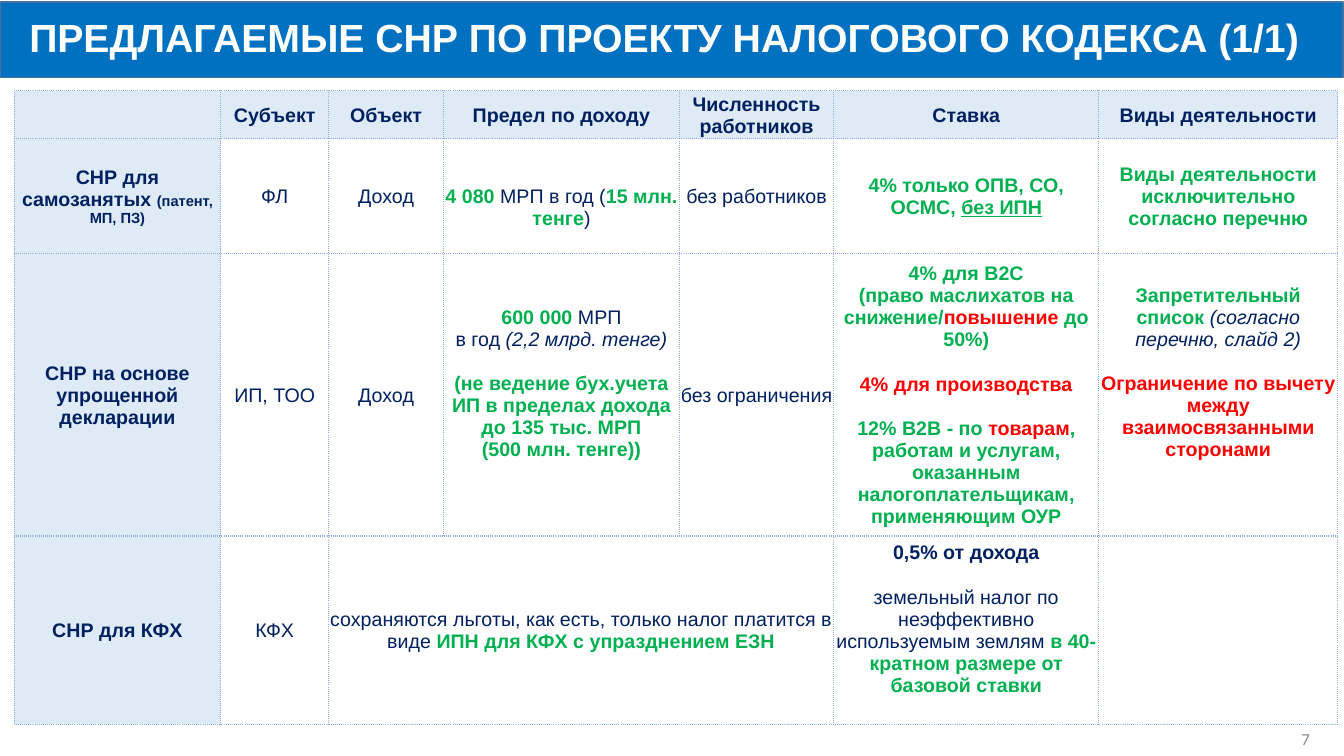
from lxml import etree
from pptx import Presentation, util as u
from pptx.dml.color import RGBColor
from pptx.enum import shapes, text
from pptx.oxml import ns

NAVY = RGBColor(0x00, 0x20, 0x60)
GREEN = RGBColor(0x00, 0xB0, 0x50)
RED = RGBColor(0xFF, 0x00, 0x00)
WHITE = RGBColor(0xFF, 0xFF, 0xFF)
GREY = RGBColor(0x8C, 0x8C, 0x8C)
BAR_BLUE = RGBColor(0x00, 0x70, 0xC0)
BAR_EDGE = RGBColor(0x43, 0x73, 0x9E)
PALE_BLUE = RGBColor(0xDE, 0xEB, 0xF7)
GRID_BLUE = RGBColor(0x8F, 0xAA, 0xDC)

# Run styles: colour, bold, italic, underline, size
PLAIN = (NAVY, False, False, False, 14)
ITALIC = (NAVY, False, True, False, 14)
HEAD = (NAVY, True, False, False, 14)
SMALL_HEAD = (NAVY, True, False, False, 10.5)
GOOD = (GREEN, True, False, False, 14)
GOOD_LINE = (GREEN, True, False, True, 14)
BAD = (RED, True, False, False, 14)
TITLE = (WHITE, True, False, False, 28)
PAGE = (GREY, False, False, False, 12)

LINE_GAP = 16  # one 14 pt text line, in points
LINE = 0.22    # the same line, in inches


def write(paragraph, parts, font="Arial"):
    """Add (wording, style) runs; a newline in the wording becomes a line break."""
    for wording, (colour, bold, italic, underline, size) in parts:
        for number, line in enumerate(wording.split("\n")):
            if number:
                paragraph.add_line_break()
            run = paragraph.add_run()
            run.text = line
            run.font.name, run.font.size = font, u.Pt(size)
            run.font.bold, run.font.italic = bold, italic
            run.font.underline = underline
            run.font.color.rgb = colour


def draw_borders(cell):
    properties = cell._tc.get_or_add_tcPr()
    for place, side in enumerate(("lnL", "lnR", "lnT", "lnB")):
        border = etree.Element(ns.qn("a:" + side), w=str(u.Pt(1)))
        fill = etree.SubElement(border, ns.qn("a:solidFill"))
        etree.SubElement(fill, ns.qn("a:srgbClr"), val=str(GRID_BLUE))
        etree.SubElement(border, ns.qn("a:prstDash"), val="sysDot")
        properties.insert(place, border)


deck = Presentation()
deck.slide_width, deck.slide_height = u.Inches(13.33), u.Inches(7.5)
slide = deck.slides.add_slide(deck.slide_layouts[6])

# Title bar
bar = slide.shapes.add_shape(shapes.MSO_SHAPE.RECTANGLE, 0, u.Inches(0.02),
                             u.Inches(13.32), u.Inches(0.75))
bar.shadow.inherit = False
bar.fill.solid()
bar.fill.fore_color.rgb = BAR_BLUE
bar.line.color.rgb = BAR_EDGE
bar.line.width = u.Pt(1)

title = slide.shapes.add_textbox(0, u.Inches(0.08), u.Inches(13.32), u.Inches(0.62)).text_frame
title.word_wrap = True
title.vertical_anchor = text.MSO_ANCHOR.MIDDLE
title.margin_left = u.Inches(0.29)
title.paragraphs[0].line_spacing = 0.9
write(title.paragraphs[0], [("ПРЕДЛАГАЕМЫЕ СНР ПО ПРОЕКТУ НАЛОГОВОГО КОДЕКСА (1/1)", TITLE)])

# Each cell is a list of paragraphs, each paragraph a list of runs
headings = ["Субъект", "Объект", "Предел по доходу", "Численность работников",
            "Ставка", "Виды деятельности"]
regimes = [
    [[]] + [[[(heading, HEAD)]] for heading in headings],
    [
        [[("СНР для самозанятых ", HEAD), ("(патент, МП, ПЗ)", SMALL_HEAD)]],
        [[("ФЛ", PLAIN)]],
        [[("Доход", PLAIN)]],
        [[("4 080 ", GOOD), ("МРП в год (", PLAIN), ("15 млн. тенге", GOOD), (")", PLAIN)]],
        [[("без работников", PLAIN)]],
        [[("4% только ОПВ, СО, ОСМС, ", GOOD), ("без ИПН", GOOD_LINE)]],
        [[("Виды деятельности исключительно согласно перечню", GOOD)]],
    ],
    [
        [[("СНР на основе упрощенной декларации", HEAD)]],
        [[("ИП, ТОО", PLAIN)]],
        [[("Доход", PLAIN)]],
        [[("600 000 ", GOOD), ("МРП\nв год ", PLAIN), ("(2,2 млрд. тенге)", ITALIC)],
         [("(не ведение бух.учета ИП в пределах дохода до 135 тыс. МРП\n"
           "(500 млн. тенге))", GOOD)]],
        [[("без ограничения", PLAIN)]],
        [[("4% для В2С\n(право маслихатов на снижение/", GOOD), ("повышение ", BAD),
          ("до 50%)", GOOD)],
         [("4% для производства", BAD)],
         [("12% В2В - по ", GOOD), ("товарам", BAD),
          (", работам и услугам, оказанным налогоплательщикам, применяющим ОУР", GOOD)]],
        [[("Запретительный список ", GOOD), ("(согласно перечню, слайд 2)", ITALIC)],
         [("Ограничение по вычету между взаимосвязанными сторонами", BAD)]],
    ],
    [
        [[("СНР для КФХ", HEAD)]],
        [[("КФХ", PLAIN)]],
        [[("сохраняются льготы, как есть, только налог платится в виде ", PLAIN),
          ("ИПН для КФХ с упразднением ЕЗН", GOOD)]],
        [], [],
        [[("0,5% от дохода", HEAD)],
         [("земельный налог по неэффективно используемым землям ", PLAIN),
          ("в 40-кратном размере от базовой ставки", GOOD)]],
        [],
    ],
]
column_widths = [2.05, 1.07, 1.14, 2.34, 1.53, 2.63, 2.37]
row_heights = [0.47, 1.14, 2.8, 1.87]
# Cells whose text sits off the middle: (row, column): (top, bottom)
offsets = {(1, 3): (LINE, 0), (2, 3): (0, LINE), (2, 6): (0, 2 * LINE), (3, 5): (0, LINE)}

table = slide.shapes.add_table(len(row_heights), len(column_widths), u.Inches(0.14), u.Inches(0.9),
                               u.Inches(sum(column_widths)), u.Inches(sum(row_heights))).table
table.first_row = table.horz_banding = False
for column, width in zip(table.columns, column_widths):
    column.width = u.Inches(width)
for row, height in zip(table.rows, row_heights):
    row.height = u.Inches(height)
table.cell(3, 2).merge(table.cell(3, 4))

for r, regime in enumerate(regimes):
    for c, content in enumerate(regime):
        cell = table.cell(r, c)
        cell.fill.solid()
        cell.fill.fore_color.rgb = PALE_BLUE if r == 0 or c == 0 else WHITE
        draw_borders(cell)
        cell.vertical_anchor = text.MSO_ANCHOR.MIDDLE
        cell.margin_left = cell.margin_right = u.Inches(0.01)
        top, bottom = offsets.get((r, c), (0.01, 0))
        cell.margin_top, cell.margin_bottom = u.Inches(top), u.Inches(bottom)
        for number, parts in enumerate(content):
            frame = cell.text_frame
            paragraph = frame.add_paragraph() if number else frame.paragraphs[0]
            paragraph.alignment = text.PP_ALIGN.CENTER
            if number:
                paragraph.space_before = u.Pt(LINE_GAP)
            write(paragraph, parts)

# Page number
page = slide.shapes.add_textbox(u.Inches(10.09), u.Inches(7.13), u.Inches(3), u.Inches(0.4)).text_frame
page.word_wrap = True
page.vertical_anchor = text.MSO_ANCHOR.MIDDLE
page.paragraphs[0].alignment = text.PP_ALIGN.RIGHT
write(page.paragraphs[0], [("7", PAGE)], "Calibri")

deck.save("out.pptx")
